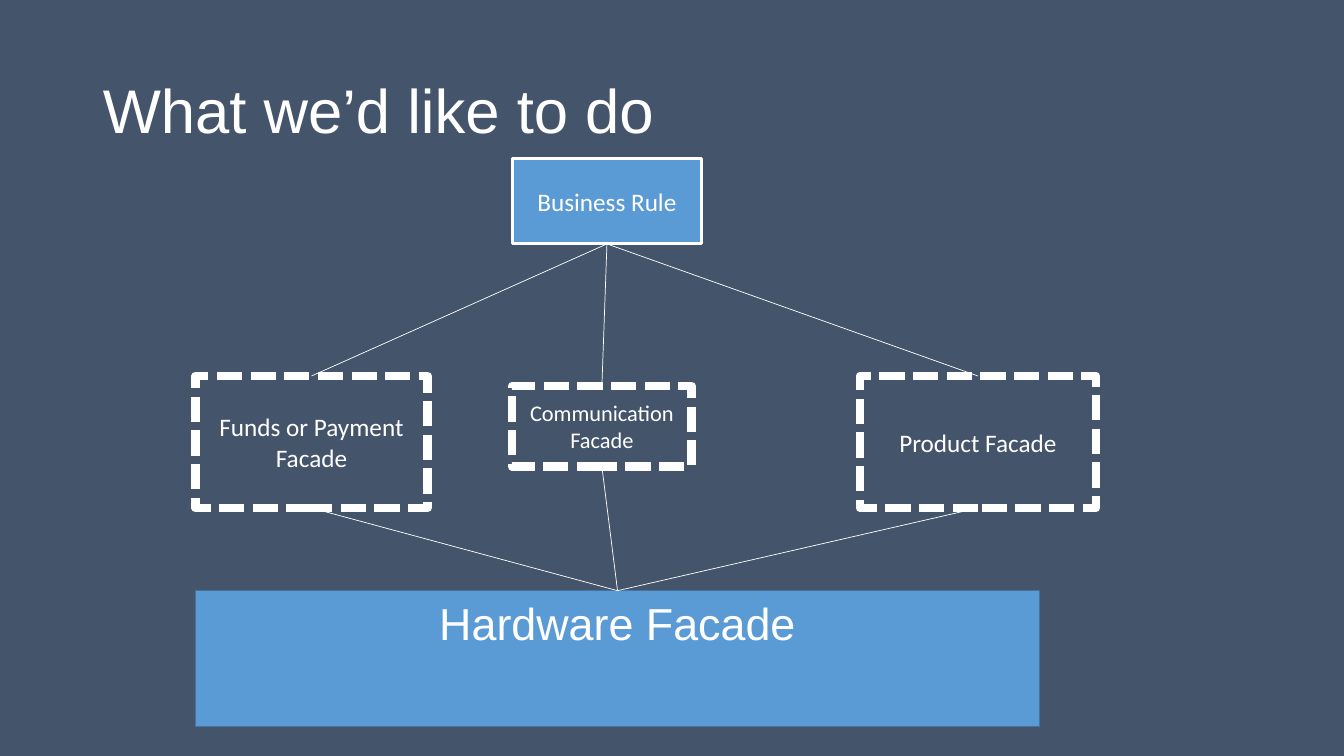
from lxml import etree
from pptx import Presentation
from pptx.dml.color import RGBColor
from pptx.enum.dml import MSO_LINE
from pptx.enum.shapes import MSO_CONNECTOR, MSO_SHAPE
from pptx.enum.text import MSO_ANCHOR, MSO_AUTO_SIZE, PP_ALIGN
from pptx.oxml.ns import qn
from pptx.util import Inches, Pt

RECTANGLE = MSO_SHAPE.RECTANGLE
STRAIGHT = MSO_CONNECTOR.STRAIGHT
DASH = MSO_LINE.SQUARE_DOT
TOP, MIDDLE = MSO_ANCHOR.TOP, MSO_ANCHOR.MIDDLE
LEFT, CENTER = PP_ALIGN.LEFT, PP_ALIGN.CENTER
TOP_SIDE, BOTTOM_SIDE = 0, 2

COLORS = {name: RGBColor.from_string(value) for name, value in {
    "background": "44546A",
    "white": "FFFFFF",
    "blue": "5B9BD5",
    "blue edge": "43739E",
}.items()}


def write_text(shape, text, size, font_name, alignment, anchor):
    frame = shape.text_frame
    frame.text = text
    frame.word_wrap = True
    frame.auto_size = MSO_AUTO_SIZE.NONE
    frame.vertical_anchor = anchor
    paragraph = frame.paragraphs[0]
    paragraph.alignment = alignment
    font = paragraph.runs[0].font
    for attribute, value in {"size": Pt(size), "name": font_name}.items():
        setattr(font, attribute, value)
    font.color.rgb = COLORS["white"]
    return paragraph


presentation = Presentation()
presentation.slide_width = Inches(13.33)
presentation.slide_height = Inches(7.5)
slide = presentation.slides.add_slide(presentation.slide_layouts[5])
slide.background.fill.solid()
slide.background.fill.fore_color.rgb = COLORS["background"]

title = slide.shapes.title
for attribute, value in {"left": 0.92, "top": 0.4, "width": 11.5, "height": 1.45}.items():
    setattr(title, attribute, Inches(value))
write_text(title, "What we’d like to do", 44, "Arial", LEFT, MIDDLE).line_spacing = 0.9

# Boxes: text, position and size, fill, line colour, line width, font size, font, anchor
FACADE = (None, "white", 6)
BOXES = {
    "communication": ("Communication Facade", (5.08, 3.83, 1.78, 0.8), *FACADE, 16, "Calibri", MIDDLE),
    "funds": ("Funds or Payment Facade", (1.94, 3.73, 2.3, 1.31), *FACADE, 18, "Calibri", MIDDLE),
    "product": ("Product Facade", (8.53, 3.73, 2.34, 1.31), *FACADE, 18, "Calibri", MIDDLE),
    "rule": ("Business Rule", (5.08, 1.57, 1.88, 0.85), "blue", "white", 2.25, 18, "Calibri", MIDDLE),
    "hardware": ("Hardware Facade", (1.94, 5.86, 8.37, 1.35), "blue", "blue edge", 1, 32, "Arial", TOP),
}
boxes = {}
for key, (text, place, fill, line_color, line_width, size, font_name, anchor) in BOXES.items():
    box = slide.shapes.add_shape(RECTANGLE, *map(Inches, place))
    box.shadow.inherit = False
    if fill:
        box.fill.solid()
        box.fill.fore_color.rgb = COLORS[fill]
    else:
        box.fill.background()
        box.line.dash_style = DASH
    box.line.color.rgb = COLORS[line_color]
    box.line.width = Pt(line_width)
    write_text(box, text, size, font_name, CENTER, anchor)
    boxes[key] = box

# Every facade hangs from the business rule and rests on the hardware
for facade in ("communication", "product", "funds"):
    for upper, lower in (("rule", facade), (facade, "hardware")):
        connector = slide.shapes.add_connector(STRAIGHT, 0, 0, 0, 0)
        connector.begin_connect(boxes[upper], BOTTOM_SIDE)
        connector.end_connect(boxes[lower], TOP_SIDE)
        connector.line.color.rgb = COLORS["white"]
        connector.line.width = Pt(0.5)
        etree.SubElement(connector.element.spPr, qn("a:effectLst"))

presentation.save("out.pptx")
